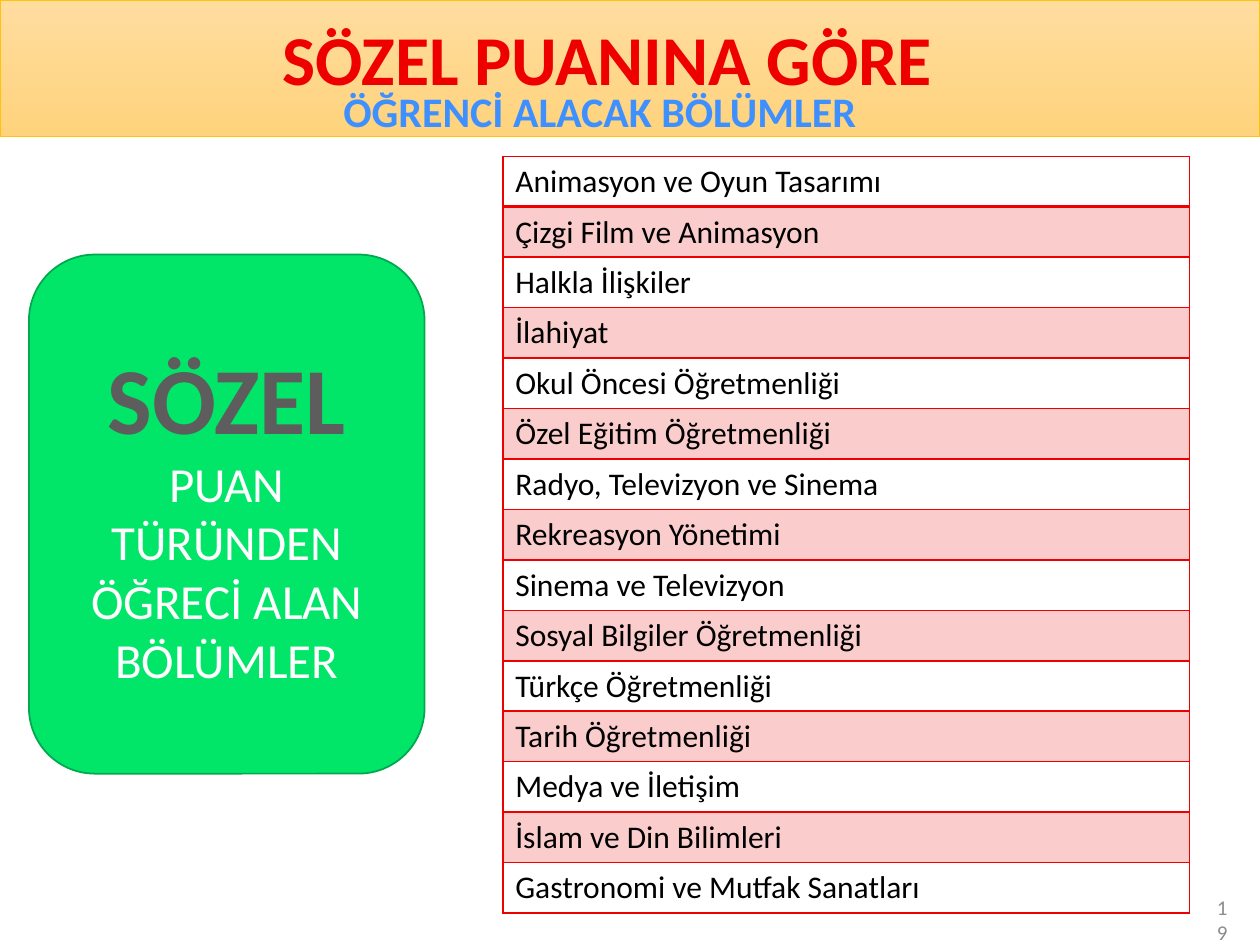
"""Build the slide listing the departments that admit students by verbal score."""
from lxml.etree import SubElement
from pptx import Presentation
from pptx.dml.color import RGBColor
from pptx.enum.shapes import MSO_SHAPE
from pptx.enum.text import MSO_ANCHOR, MSO_AUTO_SIZE, PP_ALIGN
from pptx.oxml import parse_xml
from pptx.oxml.ns import nsdecls, qn
from pptx.util import Inches, Pt

COLORS = {name: RGBColor.from_string(value) for name, value in {
    "green": "01E569", "green_line": "01A94E", "gray": "5D5D5D", "white": "FFFFFF",
    "band_top": "FFDD9F", "band_bottom": "FFD37D", "band_line": "FFC30B",
    "red": "EF0000", "blue": "3F90FF", "number": "8C8C8C", "black": "000000",
}.items()}
DEPARTMENTS = [
    "Animasyon ve Oyun Tasarımı", "Çizgi Film ve Animasyon", "Halkla İlişkiler",
    "İlahiyat", "Okul Öncesi Öğretmenliği", "Özel Eğitim Öğretmenliği",
    "Radyo, Televizyon ve Sinema", "Rekreasyon Yönetimi", "Sinema ve Televizyon",
    "Sosyal Bilgiler Öğretmenliği", "Türkçe Öğretmenliği", "Tarih Öğretmenliği",
    "Medya ve İletişim", "İslam ve Din Bilimleri", "Gastronomi ve Mutfak Sanatları",
]


def write(paragraph, text, size, color, bold=False, alignment=PP_ALIGN.CENTER):
    paragraph.text = text
    paragraph.alignment = alignment
    paragraph.font.name = "Calibri"
    paragraph.font.size = Pt(size)
    paragraph.font.bold = bold
    paragraph.font.color.rgb = COLORS[color]


def add_border(cell, side, width):
    cell._tc.get_or_add_tcPr().append(parse_xml(
        f'<a:{side} {nsdecls("a")} w="{Pt(width)}"><a:solidFill>'
        f'<a:srgbClr val="{COLORS["red"]}"/></a:solidFill></a:{side}>'))


presentation = Presentation()
presentation.slide_width = Inches(10)
presentation.slide_height = Inches(7.5)
slide = presentation.slides.add_slide(presentation.slide_layouts[5])

score_card = slide.shapes.add_shape(
    MSO_SHAPE.ROUNDED_RECTANGLE, Inches(0.23), Inches(2.02), Inches(3.14), Inches(4.12))
score_card.shadow.inherit = False
score_card.fill.solid()
score_card.fill.fore_color.rgb = COLORS["green"]
score_card.line.color.rgb = COLORS["green_line"]
score_card.line.width = Pt(1)
card_text = score_card.text_frame
card_text.vertical_anchor = MSO_ANCHOR.MIDDLE
write(card_text.paragraphs[0], "SÖZEL", 54, "gray", bold=True)
write(card_text.add_paragraph(), "PUAN TÜRÜNDEN ÖĞRECİ ALAN BÖLÜMLER", 28, "white")

band = slide.shapes.add_shape(MSO_SHAPE.RECTANGLE, 0, 0, Inches(10), Inches(1.08))
band.shadow.inherit = False
band.fill.gradient()
band.fill.gradient_angle = 270
for stop, color in zip(band.fill.gradient_stops, ("band_top", "band_bottom")):
    stop.color.rgb = COLORS[color]
band.line.color.rgb = COLORS["band_line"]
band.line.width = Pt(0.5)

title = slide.shapes.title
band.element.addnext(title.element)
title.left, title.top = Inches(-0.18), Inches(0.07)
title.width, title.height = Inches(10), Inches(1.18)
title.text_frame.vertical_anchor = MSO_ANCHOR.TOP
title.text_frame.auto_size = MSO_AUTO_SIZE.NONE
write(title.text_frame.paragraphs[0], "SÖZEL PUANINA GÖRE", 40, "red", bold=True)

subtitle = slide.shapes.add_textbox(Inches(0.27), Inches(0.63), Inches(8.98), Inches(0.5))
subtitle.text_frame.word_wrap = True
write(subtitle.text_frame.paragraphs[0], "ÖĞRENCİ ALACAK BÖLÜMLER", 24, "blue", bold=True)

slide_number = slide.shapes.add_textbox(Inches(9.49), Inches(7.1), Inches(0.35), Inches(0.4))
slide_number.text_frame.word_wrap = True
slide_number.text_frame.vertical_anchor = MSO_ANCHOR.MIDDLE
write(slide_number.text_frame.paragraphs[0], "19", 12, "number", alignment=PP_ALIGN.RIGHT)

table = slide.shapes.add_table(
    len(DEPARTMENTS), 1, Inches(3.99), Inches(1.24), Inches(5.45), Inches(6)).table
table.first_row = False
table.horz_banding = False
for index, department in enumerate(DEPARTMENTS):
    cell = table.cell(index, 0)
    write(cell.text_frame.paragraphs[0], department, 18, "black", alignment=PP_ALIGN.LEFT)
    for side in ("lnL", "lnR", "lnT", "lnB"):
        heavy = (index, side) in ((0, "lnB"), (1, "lnT"))
        add_border(cell, side, 2 if heavy else 1)
    if index % 2:
        cell.fill.solid()
        cell.fill.fore_color.rgb = COLORS["red"]
        color_element = cell._tc.tcPr.find(qn("a:solidFill")).find(qn("a:srgbClr"))
        SubElement(color_element, qn("a:alpha"), val="20000")
    else:
        cell.fill.background()

presentation.save("out.pptx")
